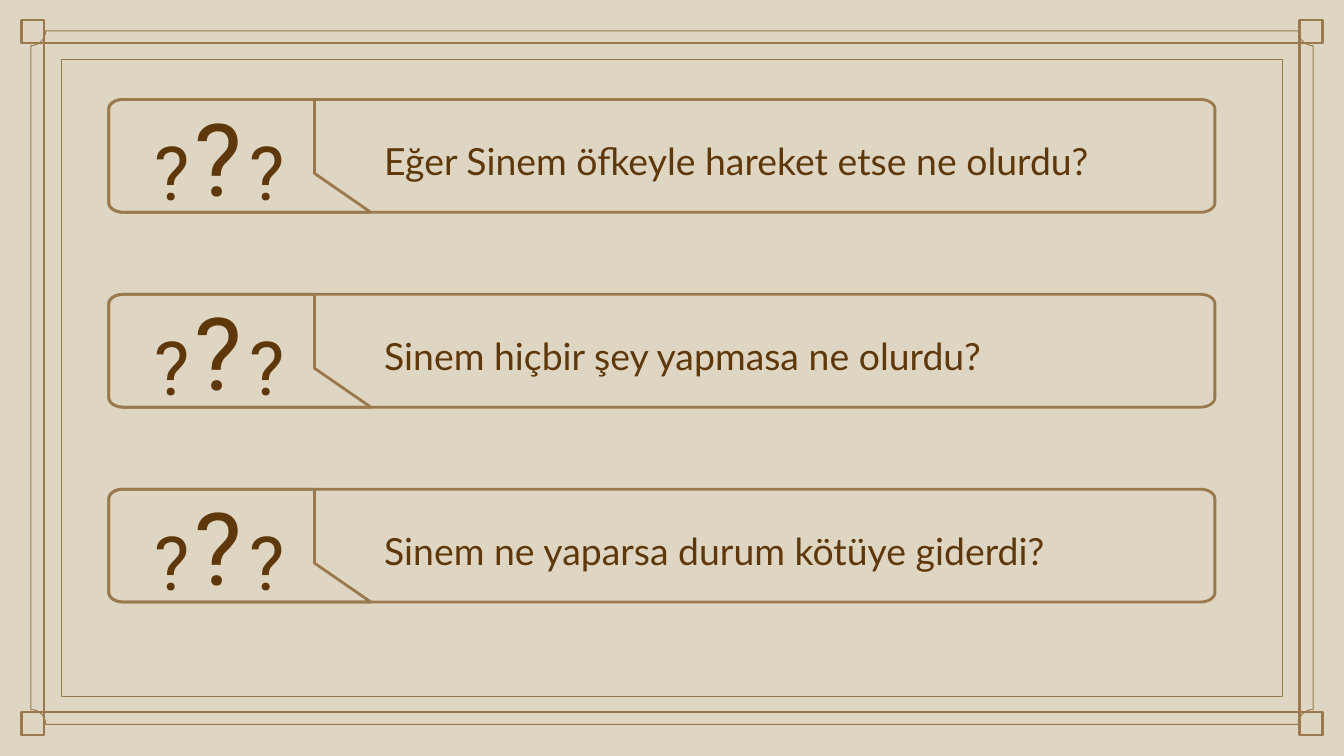
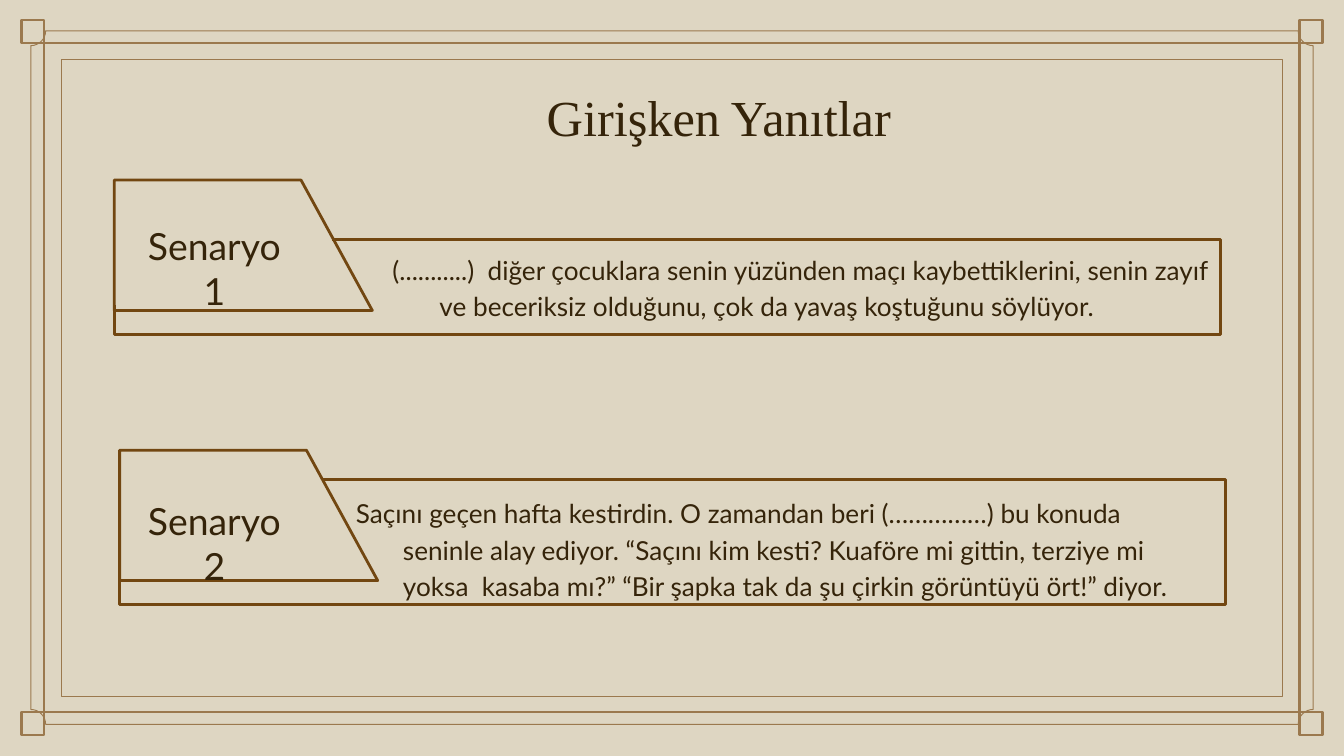
"""Build two framed slides: three open questions and two response scenarios."""
import math

from lxml import etree
from pptx import Presentation, util as u
from pptx.dml.color import RGBColor
from pptx.enum import shapes, text
from pptx.oxml import ns

SAND = RGBColor(0xDE, 0xD6, 0xC2)
FRAME_BROWN = RGBColor(0x9B, 0x79, 0x4E)
QUESTION_BROWN = RGBColor(0x5E, 0x38, 0x0A)
TAB_BROWN = RGBColor(0x72, 0x47, 0x11)
INK = RGBColor(0x35, 0x24, 0x0A)


def arc(center_x, center_y, start, radius_x, radius_y):
    """Return points of a quarter turn that runs back from the start angle."""
    angles = [math.radians(start - 90 * step / 8) for step in range(9)]
    return [(center_x + radius_x * math.cos(a), center_y + radius_y * math.sin(a))
            for a in angles]


def draw_outline(slide, points, color, width, closed=True):
    """Draw an unfilled freeform through points given in inches."""
    points = [(u.Inches(x), u.Inches(y)) for x, y in points]
    builder = slide.shapes.build_freeform(*points[0], scale=1.0)
    builder.add_line_segments(points[1:], close=closed)
    shape = builder.convert_to_shape()
    shape.shadow.inherit = False
    shape.fill.background()
    shape.line.color.rgb = color
    shape.line.width = u.Pt(width)
    return shape


presentation = Presentation()
presentation.slide_width = u.Inches(10)
presentation.slide_height = u.Inches(10 * 9 / 16)
master = presentation.slide_master
master.background.fill.solid()
master.background.fill.fore_color.rgb = SAND
question_slide = presentation.slides.add_slide(presentation.slide_layouts[6])
scenario_slide = presentation.slides.add_slide(presentation.slide_layouts[1])

frame_rectangles = [(0.33, 0.32, 9.34, 4.98, 1.28), (0.46, 0.44, 9.08, 4.74, 0.5)]
frame_rectangles += [(x, y, 0.17, 0.17, 1.28) for x in (0.16, 9.67) for y in (0.15, 5.3)]
frame_shapes = []
for *box, width in frame_rectangles:
    shape = question_slide.shapes.add_shape(
        shapes.MSO_SHAPE.RECTANGLE, *[u.Inches(value) for value in box])
    shape.shadow.inherit = False
    shape.fill.background()
    shape.line.color.rgb = FRAME_BROWN
    shape.line.width = u.Pt(width)
    frame_shapes.append(shape)

notches = []
for index, (x, y) in enumerate([(0.23, 5.39), (0.23, 0.23), (9.77, 0.23), (9.77, 5.39)]):
    notches += arc(x, y, 90 * index, 0.11, 0.11)
frame_shapes.append(draw_outline(question_slide, notches, FRAME_BROWN, 0.5))

for number, shape in enumerate(frame_shapes, 20):
    shape.element.nvSpPr.cNvPr.id = number
    master.element.cSld.spTree.append(shape.element)

question_format = {"size": u.Pt(20), "name": "Lato"}
large_mark = {"size": u.Pt(54), "name": "Roboto"}
small_mark = {"size": u.Pt(40), "name": "Roboto"}
text_boxes = []
questions = ["Eğer Sinem öfkeyle hareket etse ne olurdu?",
             "Sinem hiçbir şey yapmasa ne olurdu?",
             "Sinem ne yaparsa durum kötüye giderdi?"]
for index, question in enumerate(questions):
    top = 0.74 + 1.45 * index
    bottom = top + 0.84
    left_side = arc(0.92, top + 0.07, 270, 0.11, 0.07) + arc(0.92, bottom - 0.07, 180, 0.11, 0.07)
    right_side = arc(8.93, bottom - 0.07, 90, 0.11, 0.07) + arc(8.93, top + 0.07, 0, 0.11, 0.07)
    tab_side = [(2.76, bottom), (2.34, bottom - 0.29), (2.34, top)]
    for side in (right_side, tab_side):
        draw_outline(question_slide, left_side + side, FRAME_BROWN, 1.5)
    text_boxes += [
        ((2.76, top + 0.24, 5.56, 0.44), question, question_format),
        ((1.35, top - 0.08, 0.87, 1.01), "?", large_mark),
        ((1.05, top + 0.15, 0.87, 0.77), "?", small_mark),
        ((1.76, top + 0.15, 0.87, 0.77), "?", small_mark)]

for box, words, format_values in text_boxes:
    shape = question_slide.shapes.add_textbox(*[u.Inches(value) for value in box])
    shape.text_frame.word_wrap = True
    paragraph = shape.text_frame.paragraphs[0]
    paragraph.text = words
    for name, value in format_values.items():
        setattr(paragraph.font, name, value)
    paragraph.font.color.rgb = QUESTION_BROWN

title = scenario_slide.shapes.title
body = scenario_slide.placeholders[1]

scenarios = [
    {"left": 0.85, "tab_top": 1.34, "bar_top": 1.78, "bar_bottom": 2.49, "stub": 2.27,
     "link": 2.47, "label": "Senaryo 1", "label_top": 1.61,
     "holder": body, "box": (2.67, 1.76, 6.59, 0.83),
     "story": "(...........)  diğer çocuklara senin yüzünden maçı kaybettiklerini, "
              "senin zayıf ve beceriksiz olduğunu, çok da yavaş koştuğunu söylüyor."},
    {"left": 0.89, "tab_top": 3.35, "bar_top": 3.57, "bar_bottom": 4.5, "stub": 4.21,
     "link": 2.4, "label": "Senaryo 2", "label_top": 3.66,
     "holder": None, "box": (2.4, 3.57, 6.47, 0.83),
     "story": "Saçını geçen hafta kestirdin. O zamandan beri (……………) bu konuda seninle "
              "alay ediyor. “Saçını kim kesti? Kuaföre mi gittin, terziye mi yoksa  kasaba "
              "mı?” “Bir şapka tak da şu çirkin görüntüyü ört!” diyor."}]
scenario_texts = [(title, (3.01, 0.43, 3.72, 0.76), "Girişken Yanıtlar", "title")]
for scenario in scenarios:
    left, tab_top, bar_top = scenario["left"], scenario["tab_top"], scenario["bar_top"]
    bar_bottom, bar_start, right = scenario["bar_bottom"], left + 2.28, left + 8.23
    draw_outline(scenario_slide,
                 [(left, scenario["stub"]), (left, bar_bottom), (right, bar_bottom),
                  (right, bar_top), (bar_start, bar_top)], TAB_BROWN, 1.5, closed=False)
    draw_outline(scenario_slide,
                 [(left, tab_top), (left, tab_top + 0.97), (left + 1.92, tab_top + 0.97),
                  (left + 1.39, tab_top)], TAB_BROWN, 1.5)
    connector = scenario_slide.shapes.add_connector(
        shapes.MSO_CONNECTOR.STRAIGHT, u.Inches(scenario["link"]), u.Inches(bar_top),
        u.Inches(bar_start), u.Inches(bar_top))
    connector.line.color.rgb = TAB_BROWN
    connector.line.width = u.Pt(1.5)
    etree.SubElement(connector.element.spPr, ns.qn("a:effectLst"))
    scenario_texts += [
        (None, (0.89, scenario["label_top"], 1.41, 0.44), scenario["label"], "label"),
        (scenario["holder"], scenario["box"], scenario["story"], "story")]

styles = {
    "title": {"font": {"size": u.Pt(27), "name": "Times New Roman"},
              "paragraph": {"alignment": text.PP_ALIGN.RIGHT},
              "anchor": text.MSO_ANCHOR.BOTTOM, "insets": (0.1, 0.1)},
    "label": {"font": {"size": u.Pt(20), "name": "Lato"},
              "paragraph": {"alignment": text.PP_ALIGN.CENTER},
              "anchor": text.MSO_ANCHOR.TOP, "insets": (0.1, 0.05)},
    "story": {"font": {"size": u.Pt(14), "name": "Lato"},
              "paragraph": {"alignment": text.PP_ALIGN.LEFT, "line_spacing": 1.15,
                            "space_before": u.Pt(0)},
              "anchor": text.MSO_ANCHOR.TOP, "insets": (0.1, 0.1)}}
for shape, box, words, style_name in scenario_texts:
    style = styles[style_name]
    lengths = [u.Inches(value) for value in box]
    shape = shape or scenario_slide.shapes.add_textbox(*lengths)
    for name, value in zip(("left", "top", "width", "height"), lengths):
        setattr(shape, name, value)
    frame = shape.text_frame
    frame.word_wrap = True
    frame.auto_size = text.MSO_AUTO_SIZE.NONE
    frame.vertical_anchor = style["anchor"]
    side_inset, end_inset = [u.Inches(value) for value in style["insets"]]
    frame.margin_left = frame.margin_right = side_inset
    frame.margin_top = frame.margin_bottom = end_inset
    paragraph = frame.paragraphs[0]
    paragraph.text = words
    for name, value in style["paragraph"].items():
        setattr(paragraph, name, value)
    if style_name == "story":
        properties = paragraph._p.get_or_add_pPr()
        properties.set("marL", str(u.Inches(0.5)))
        properties.set("indent", str(u.Inches(-0.35)))
        etree.SubElement(properties, ns.qn("a:buNone"))
    for name, value in style["font"].items():
        setattr(paragraph.font, name, value)
    paragraph.font.color.rgb = INK

presentation.save("out.pptx")
